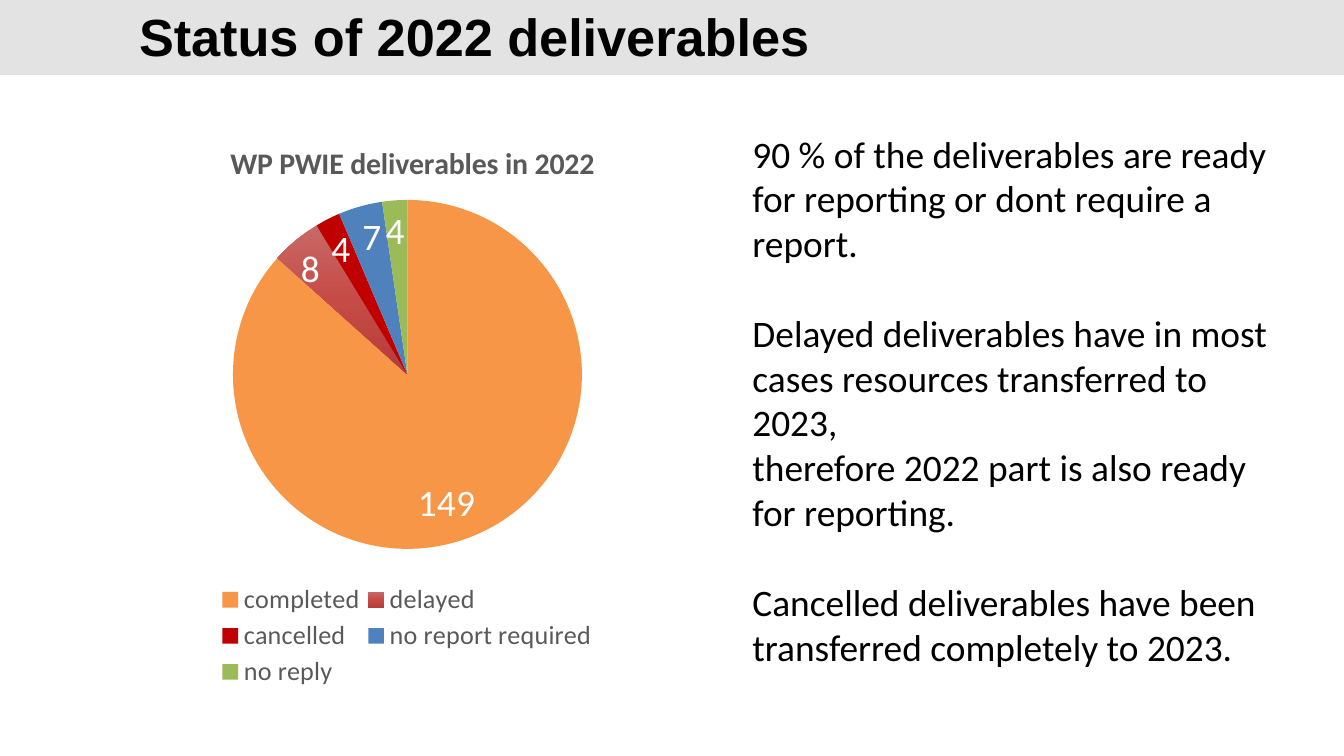
from dataclasses import dataclass
import copy

import lxml.etree
import pptx
import pptx.chart.data
import pptx.dml.color
import pptx.enum.chart
import pptx.enum.shapes
import pptx.enum.text
import pptx.oxml.ns
import pptx.util

PX_PER_INCH = 134.4
COLOURS = {
    "bar": "E3E3E3",
    "text": "000000",
    "muted": "595959",
    "label": "FFFFFF",
    "completed": "F79646",
    "cancelled": "C00000",
    "no report": "4F81BD",
    "no reply": "9BBB59",
}
DELAYED_STOPS = ("C76967", "C64B47", "B63C39")


@dataclass(frozen=True)
class Area:
    left: int
    top: int
    width: int
    height: int

    def emu(self) -> tuple:
        return tuple(map(px, (self.left, self.top, self.width, self.height)))


@dataclass(frozen=True)
class Slice:
    name: str
    count: int
    colour: str = ""  # empty means the gradient


@dataclass(frozen=True)
class Statement:
    text: str
    before: int = 0


CHART = Area(47, 113, 719, 582)
TITLE_AREA = Area(225, 138, 364, 36)
PIE_AREA = Area(233, 200, 349, 349)
LEGEND_AREA = Area(214, 580, 386, 112)

SLICES = [
    Slice("completed", 149, "completed"),
    Slice("delayed", 8),
    Slice("cancelled", 4, "cancelled"),
    Slice("no report required", 7, "no report"),
    Slice("no reply", 4, "no reply"),
]
STATEMENTS = [
    Statement("90 % of the deliverables are ready for reporting or dont require a report."),
    Statement("Delayed deliverables have in most cases resources transferred to 2023,", 24),
    Statement("therefore 2022 part is also ready for reporting."),
    Statement("Cancelled deliverables have been transferred completely to 2023.", 24),
]


def px(length: int) -> int:
    return pptx.util.Emu(round(length * 914400 / PX_PER_INCH))


def rgb(value: str):
    return pptx.dml.color.RGBColor.from_string(value)


def format_font(font, *, size: int, colour: str, name: str = "Calibri", bold: bool = False) -> None:
    font.size = pptx.util.Pt(size)
    font.name = name
    font.bold = bold
    font.color.rgb = rgb(COLOURS[colour])


def write(para, text: str, *, before: int = 0, spacing=1.0, **font_format) -> None:
    properties = para._p.get_or_add_pPr()
    properties.set("marL", "0")
    properties.set("indent", "0")
    lxml.etree.SubElement(properties, pptx.oxml.ns.qn("a:buNone"))
    para.alignment = pptx.enum.text.PP_ALIGN.LEFT
    para.space_before = pptx.util.Pt(before)
    para.line_spacing = spacing
    span = para.add_run()
    span.text = text
    format_font(span.font, **font_format)


def place(shape, area: Area) -> None:
    shape.left, shape.top, shape.width, shape.height = area.emu()


def set_layout(element, area: Area, index: int, *, inner: bool = False, sized: bool = True) -> None:
    """Fix a chart part at an area of the slide."""
    qn = pptx.oxml.ns.qn
    for old in element.findall(qn("c:layout")):
        element.remove(old)
    layout = lxml.etree.Element(qn("c:layout"))
    manual = lxml.etree.SubElement(layout, qn("c:manualLayout"))
    values = {"layoutTarget": "inner"} if inner else {}
    values.update(xMode="edge", yMode="edge")
    values["x"] = f"{(area.left - CHART.left) / CHART.width:.4f}"
    values["y"] = f"{(area.top - CHART.top) / CHART.height:.4f}"
    if sized:
        values["w"] = f"{area.width / CHART.width:.4f}"
        values["h"] = f"{area.height / CHART.height:.4f}"
    for name, value in values.items():
        lxml.etree.SubElement(manual, qn(f"c:{name}")).set("val", value)
    element.insert(index, layout)


def fill_gradient(fill, chart_element) -> None:
    fill.gradient()
    fill.gradient_angle = 270
    stop_list = chart_element.xpath(".//a:gsLst")[0]
    stop_list.insert(1, copy.deepcopy(stop_list[0]))
    for index, (stop, colour) in enumerate(zip(fill.gradient_stops, DELAYED_STOPS)):
        stop.color.rgb = rgb(colour)
        stop.position = index / 2


def add_bar(page) -> None:
    bar = page.shapes.add_shape(pptx.enum.shapes.MSO_SHAPE.RECTANGLE, *Area(0, 0, 1344, 75).emu())
    bar.shadow.inherit = False
    bar.fill.solid()
    bar.fill.fore_color.rgb = rgb(COLOURS["bar"])
    bar.line.fill.background()
    bar.element.getparent().insert(2, bar.element)  # behind the title


def add_title(page) -> None:
    title = page.shapes.title
    place(title, Area(-9, 12, 1109, 51))
    box = title.text_frame
    box.auto_size = pptx.enum.text.MSO_AUTO_SIZE.NONE
    box.vertical_anchor = pptx.enum.text.MSO_ANCHOR.MIDDLE
    box.margin_left = px(148)
    box.margin_top = box.margin_bottom = 0
    write(box.paragraphs[0], "Status of 2022 deliverables", spacing=pptx.util.Pt(32),
          size=28, colour="text", name="Arial", bold=True)


def add_pie(page) -> None:
    data = pptx.chart.data.CategoryChartData()
    data.categories = [part.name for part in SLICES]
    data.add_series("Series 1", [part.count for part in SLICES])
    chart = page.shapes.add_chart(pptx.enum.chart.XL_CHART_TYPE.PIE, *CHART.emu(), data).chart
    format_font(chart.font, size=10, colour="text")

    # Title and legend
    chart.has_title = True
    span = chart.chart_title.text_frame.paragraphs[0].add_run()
    span.text = "WP PWIE deliverables in 2022"
    format_font(span.font, size=16, colour="muted", bold=True)
    chart.has_legend = True
    chart.legend.position = pptx.enum.chart.XL_LEGEND_POSITION.BOTTOM
    chart.legend.include_in_layout = False
    format_font(chart.legend.font, size=14, colour="muted")

    # Slices and their values
    plot = chart.plots[0]
    plot.vary_by_categories = True
    for index, part in enumerate(SLICES):
        fill = plot.series[0].points[index].format.fill
        if part.colour:
            fill.solid()
            fill.fore_color.rgb = rgb(COLOURS[part.colour])
        else:
            fill_gradient(fill, chart.element)
    labels = plot.series[0].data_labels
    labels.show_value = True
    labels.position = pptx.enum.chart.XL_LABEL_POSITION.INSIDE_END
    format_font(labels.font, size=20, colour="label")

    # Positions inside the chart
    title, plot_area, legend = (
        chart.element.xpath(f"c:chart/c:{name}")[0] for name in ("title", "plotArea", "legend")
    )
    set_layout(title, TITLE_AREA, 1, sized=False)
    set_layout(plot_area, PIE_AREA, 0, inner=True)
    set_layout(legend, LEGEND_AREA, 1)


def add_statements(page) -> None:
    body = page.placeholders[1]
    place(body, Area(739, 124, 550, 597))
    box = body.text_frame
    box.word_wrap = True
    box.auto_size = pptx.enum.text.MSO_AUTO_SIZE.SHAPE_TO_FIT_TEXT
    box.vertical_anchor = pptx.enum.text.MSO_ANCHOR.TOP
    for index, statement in enumerate(STATEMENTS):
        para = box.add_paragraph() if index else box.paragraphs[0]
        write(para, statement.text, before=statement.before, size=20, colour="text")


def main() -> None:
    deck = pptx.Presentation()
    deck.slide_width, deck.slide_height = px(1344), px(756)
    page = deck.slides.add_slide(deck.slide_layouts[1])
    add_bar(page)
    add_title(page)
    add_pie(page)
    add_statements(page)
    deck.save("out.pptx")


if __name__ == "__main__":
    main()
